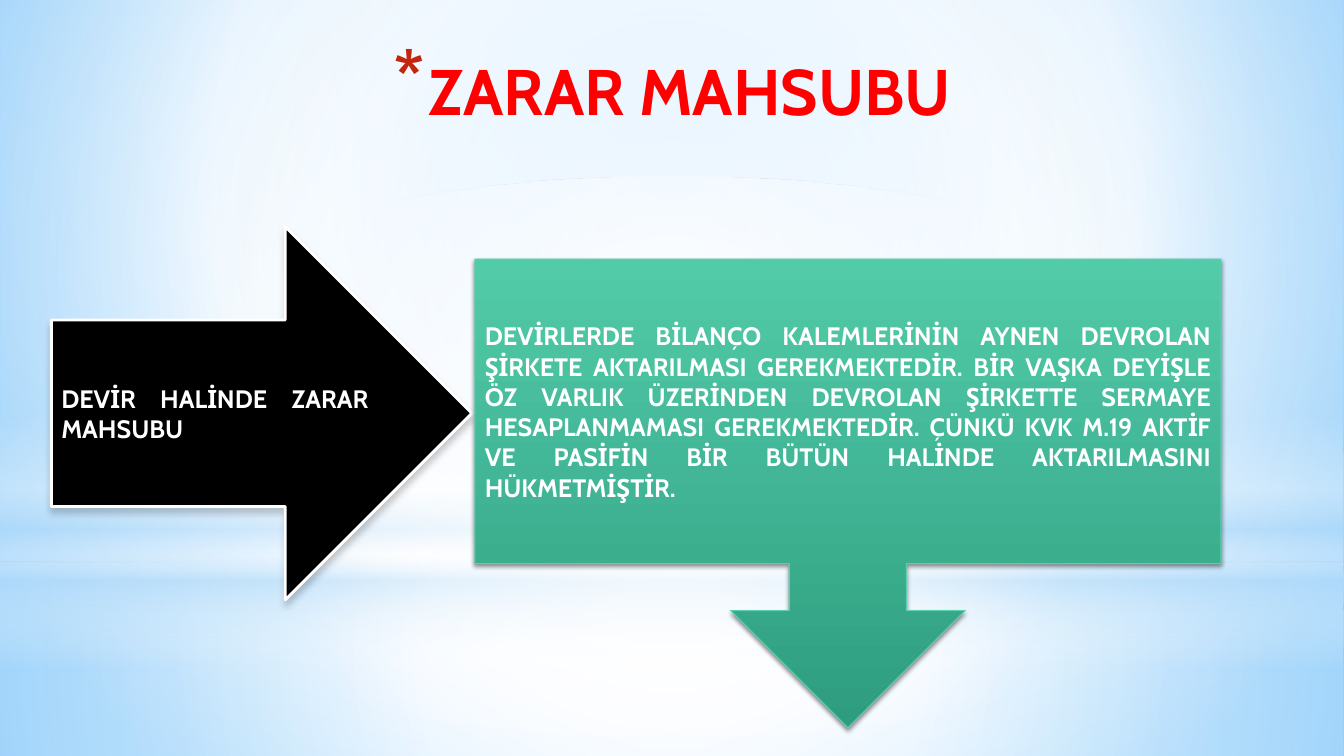
from lxml import etree
from pptx import Presentation
from pptx.dml.color import RGBColor
from pptx.enum.shapes import MSO_SHAPE
from pptx.enum.text import MSO_ANCHOR, PP_ALIGN
from pptx.oxml import parse_xml
from pptx.oxml.ns import nsdecls, qn
from pptx.util import Inches, Pt

RECTANGLE, ELLIPSE = MSO_SHAPE.RECTANGLE, MSO_SHAPE.OVAL
RIGHT_ARROW, DOWN_CALLOUT = MSO_SHAPE.RIGHT_ARROW, MSO_SHAPE.DOWN_ARROW_CALLOUT
CENTER, JUSTIFY, MIDDLE = PP_ALIGN.CENTER, PP_ALIGN.JUSTIFY, MSO_ANCHOR.MIDDLE

WIDTH, HEIGHT = 13.33, 7.5
HORIZON = 5.58
COLORS = {
    "white": "FFFFFF", "black": "000000", "red": "FF0000", "bullet": "C3260C",
    "haze": "B4DCFA", "sky": "9ED5FF", "deep sky": "5BB9FF",
    "mint": "52CBA9", "green": "2E9D7F", "mint edge": "5DCEAF",
}
CENTRED = (50, 50, 50, 50)


def set_gradient(fill, holder, stops, focus=None):
    """Fill with (position, colour, opacity) stops: round a focus, or downwards without one."""
    fill.solid()
    gradient = parse_xml(f'<a:gradFill {nsdecls("a")} rotWithShape="1"><a:gsLst/></a:gradFill>')
    for position, color, opacity in stops:
        stop = etree.SubElement(gradient[0], qn("a:gs"), pos=str(position * 1000))
        tone = etree.SubElement(stop, qn("a:srgbClr"), val=COLORS[color])
        if opacity < 100:
            etree.SubElement(tone, qn("a:alpha"), val=str(opacity * 1000))
    if focus:
        around = etree.SubElement(gradient, qn("a:path"), {"path": "circle"})
        sides = {side: str(share * 1000) for side, share in zip("ltrb", focus)}
        etree.SubElement(around, qn("a:fillToRect"), sides)
    else:
        etree.SubElement(gradient, qn("a:lin"), ang="5400000", scaled="0")
    solid = holder.find(qn("a:solidFill"))
    holder.replace(solid, gradient)


def write(shape, text, size=18, color="white", align=JUSTIFY):
    frame = shape.text_frame
    frame.word_wrap = True
    frame.vertical_anchor = MIDDLE
    para = frame.paragraphs[0]
    para.alignment = align
    span = para.add_run()
    span.text = text
    span.font.name, span.font.size, span.font.bold = "Cabin", Pt(size), True
    span.font.color.rgb = RGBColor.from_string(COLORS[color])
    return para


deck = Presentation()
deck.slide_width, deck.slide_height = Inches(WIDTH), Inches(HEIGHT)
page = deck.slides.add_slide(deck.slide_layouts[5])

# Sky background
sky = page.background.fill
sky.solid()
set_gradient(sky, page.element.find(".//" + qn("p:bgPr")),
             [(0, "sky", 100), (60, "white", 100), (100, "deep sky", 100)], (20, 10, 20, 60))

# Full-width layers of haze: preset, top, height, stops, focus
layers = [
    (RECTANGLE, HORIZON, HEIGHT - HORIZON,
     [(0, "white", 91), (37, "white", 76), (100, "haze", 79)], CENTRED),
    (RECTANGLE, 0, HORIZON,
     [(0, "white", 89), (48, "white", 62), (100, "haze", 79)], CENTRED),
    (RECTANGLE, 4.12, HEIGHT / 3,
     [(0, "white", 0), (29, "white", 30), (45, "haze", 40),
      (55, "white", 26), (65, "haze", 60), (100, "white", 0)], None),
    (ELLIPSE, 1.75, HORIZON, [(0, "white", 100), (56, "white", 0)], CENTRED),
]
for preset, top, height, stops, focus in layers:
    layer = page.shapes.add_shape(preset, 0, Inches(top), Inches(WIDTH), Inches(height))
    layer.shadow.inherit = False
    layer.line.fill.background()
    set_gradient(layer.fill, layer.element.spPr, stops, focus)

# Title, in front of the haze
title = page.shapes.title
title.element.getparent().append(title.element)
title.left, title.top = Inches(WIDTH / 10), Inches(0.47)
title.width, title.height = Inches(WIDTH * 0.8), Inches(0.84)
heading = write(title, "ZARAR MAHSUBU", size=46, color="red", align=CENTER)
indent = Inches(0.35)
properties = heading._p.get_or_add_pPr()
properties.set("marL", str(indent))
properties.set("indent", str(-indent))
bullet_color = etree.SubElement(properties, qn("a:buClr"))
etree.SubElement(bullet_color, qn("a:srgbClr"), val=COLORS["bullet"])
etree.SubElement(properties, qn("a:buSzPct"), val="128000")
etree.SubElement(properties, qn("a:buChar"), char="*")

# Topic arrow and explanation: preset, place, stops, edge, shadow (opacity, blur, distance), text
blocks = [
    (RIGHT_ARROW, (0.51, 2.25, 4.17, 3.7), None, ("white", 2), (20, 5, 4),
     "DEVİR HALİNDE ZARAR MAHSUBU"),
    (DOWN_CALLOUT, (4.71, 2.57, 7.4, 4.65), [(0, "mint", 100), (100, "green", 100)],
     ("mint edge", 0.75), (45, 3.1, 1.8),
     "DEVİRLERDE BİLANÇO KALEMLERİNİN AYNEN DEVROLAN ŞİRKETE AKTARILMASI GEREKMEKTEDİR. "
     "BİR VAŞKA DEYİŞLE ÖZ VARLIK ÜZERİNDEN DEVROLAN ŞİRKETTE SERMAYE HESAPLANMAMASI "
     "GEREKMEKTEDİR. ÇÜNKÜ KVK M.19 AKTİF VE PASİFİN BİR BÜTÜN HALİNDE AKTARILMASINI "
     "HÜKMETMİŞTİR."),
]
for preset, place, stops, (edge, weight), (opacity, blur, distance), text in blocks:
    block = page.shapes.add_shape(preset, *map(Inches, place))
    if stops:
        set_gradient(block.fill, block.element.spPr, stops)
    else:
        block.fill.solid()
        block.fill.fore_color.rgb = RGBColor.from_string(COLORS["black"])
    block.line.color.rgb = RGBColor.from_string(COLORS[edge])
    block.line.width = Pt(weight)
    block.shadow.inherit = False
    effects = block.element.spPr.find(qn("a:effectLst"))
    shadow = etree.SubElement(effects, qn("a:outerShdw"), blurRad=str(Pt(blur)),
                              dist=str(Pt(distance)), dir="5400000", rotWithShape="0")
    shade = etree.SubElement(shadow, qn("a:srgbClr"), val=COLORS["black"])
    etree.SubElement(shade, qn("a:alpha"), val=str(opacity * 1000))
    write(block, text)

deck.save("out.pptx")
